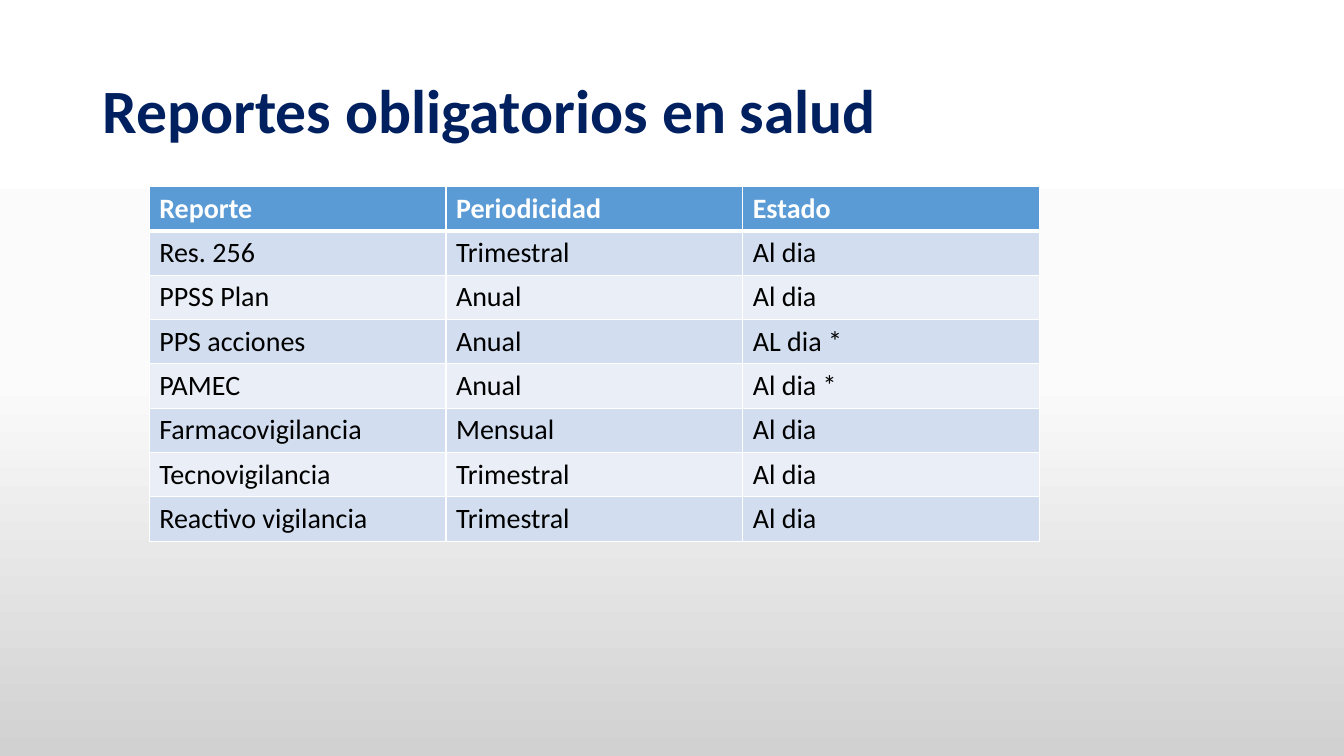
from copy import deepcopy

from lxml.etree import SubElement
from pptx import Presentation
from pptx.dml.color import RGBColor
from pptx.enum.text import MSO_ANCHOR
from pptx.oxml.ns import qn
from pptx.util import Inches, Pt


def color(value):
    return RGBColor.from_string(value)


def add_border(cell, side, points):
    properties = cell._tc.get_or_add_tcPr()
    line = properties.makeelement(qn(f"a:ln{side}"), {"w": str(Pt(points))})
    fill = SubElement(line, qn("a:solidFill"))
    SubElement(fill, qn("a:srgbClr"), val="FFFFFF")
    properties.insert("LRTB".index(side), line)


presentation = Presentation()
presentation.slide_width = Inches(13.33)
presentation.slide_height = Inches(7.5)
slide = presentation.slides.add_slide(presentation.slide_layouts[6])

background = slide.background.fill
background.gradient()
background.gradient_angle = 270
stop_list = slide.element.find(".//" + qn("a:gsLst"))
stop_list.append(deepcopy(stop_list[0]))
gradient = [(0, "FFFFFF"), (0.5, "FBFBFB"), (1, "D1D1D1")]
for stop, (position, value) in zip(background.gradient_stops, gradient):
    stop.position = position
    stop.color.rgb = color(value)

title = slide.shapes.add_textbox(Inches(0.92), Inches(0.4), Inches(11.5), Inches(1.45))
title.text_frame.word_wrap = True
title.text_frame.vertical_anchor = MSO_ANCHOR.MIDDLE
title.text_frame.text = "Reportes obligatorios en salud"
paragraph = title.text_frame.paragraphs[0]
paragraph.line_spacing = 0.9
paragraph.font.name = "Calibri"
paragraph.font.size = Pt(44)
paragraph.font.bold = True
paragraph.font.color.rgb = color("002060")

reports = [
    ("Reporte", "Periodicidad", "Estado"),
    ("Res. 256", "Trimestral", "Al dia"),
    ("PPSS Plan", "Anual", "Al dia"),
    ("PPS acciones", "Anual", "AL dia *"),
    ("PAMEC", "Anual", "Al dia *"),
    ("Farmacovigilancia", "Mensual", "Al dia"),
    ("Tecnovigilancia", "Trimestral", "Al dia"),
    ("Reactivo vigilancia", "Trimestral", "Al dia"),
]
row_height = 0.44
table = slide.shapes.add_table(
    len(reports), len(reports[0]),
    Inches(1.48), Inches(1.85), Inches(8.83), Inches(row_height * len(reports)),
).table

for row, report in enumerate(reports):
    header = row == 0
    row_fill = "5B9BD5" if header else ("EAEFF7", "D2DEEF")[row % 2]
    for column, text in enumerate(report):
        cell = table.cell(row, column)
        cell.fill.solid()
        cell.fill.fore_color.rgb = color(row_fill)
        for side in "LRTB":
            thick = (header and side == "B") or (row == 1 and side == "T")
            add_border(cell, side, 3 if thick else 1)
        cell.text_frame.text = text
        font = cell.text_frame.paragraphs[0].font
        font.name = "Calibri"
        font.size = Pt(20)
        font.bold = header
        font.color.rgb = color("FFFFFF" if header else "000000")

presentation.save("out.pptx")
